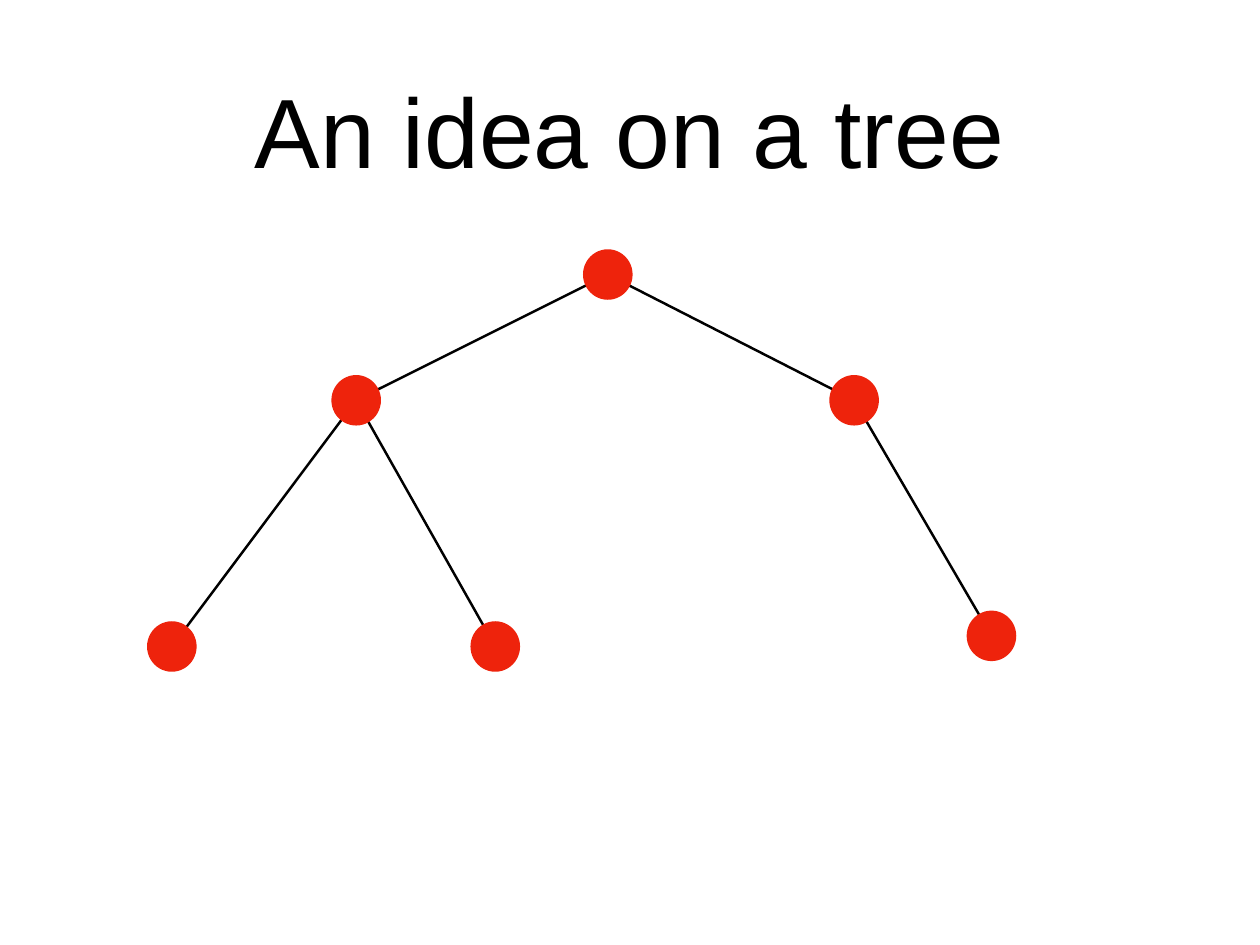
from lxml import etree
from pptx import Presentation
from pptx.dml.color import RGBColor
from pptx.enum.shapes import MSO_CONNECTOR, MSO_SHAPE
from pptx.enum.text import MSO_ANCHOR, PP_ALIGN
from pptx.oxml.ns import qn
from pptx.util import Inches, Pt

COLORS = {"background": "FFFFFF", "text": "000000", "edge": "000000", "node": "EE230C"}
FONT = "Arial"
NODE_W, NODE_H = 0.56, 0.57

# Node centres in inches
NODES = {
    "root": (6.86, 3.1),
    "left": (4.02, 4.52),
    "left_left": (1.94, 7.3),
    "left_right": (5.59, 7.3),
    "right": (9.64, 4.52),
    "right_right": (11.19, 7.18),
}
EDGES = [
    ("root", "right"),
    ("root", "left"),
    ("left", "left_left"),
    ("left", "left_right"),
    ("right", "right_right"),
]


def color(name):
    return RGBColor.from_string(COLORS[name])


def add_title(slide, text):
    box = slide.shapes.add_textbox(Inches(1.04), Inches(0.28), Inches(12.14), Inches(2.36))
    tf = box.text_frame
    tf.word_wrap = True
    tf.vertical_anchor = MSO_ANCHOR.MIDDLE
    tf.margin_left = tf.margin_right = tf.margin_top = tf.margin_bottom = Inches(0.06)
    p = tf.paragraphs[0]
    p.alignment = PP_ALIGN.CENTER
    r = p.add_run()
    r.text = text
    r.font.name = FONT
    r.font.size = Pt(80)
    r.font.color.rgb = color("text")


def add_edge(slide, parent, child):
    """Draw a line between the centres of two nodes."""
    ends = [Inches(v) for v in NODES[parent] + NODES[child]]
    line = slide.shapes.add_connector(MSO_CONNECTOR.STRAIGHT, *ends)
    line.line.color.rgb = color("edge")
    line.line.width = Pt(2)
    etree.SubElement(line._element.spPr, qn("a:effectLst"))


def add_node(slide, x, y):
    """Draw a filled circle centred on (x, y)."""
    sp = slide.shapes.add_shape(
        MSO_SHAPE.OVAL,
        Inches(x - NODE_W / 2), Inches(y - NODE_H / 2), Inches(NODE_W), Inches(NODE_H),
    )
    sp.shadow.inherit = False
    sp.fill.solid()
    sp.fill.fore_color.rgb = color("node")
    sp.line.fill.background()


def main():
    prs = Presentation()
    prs.slide_width, prs.slide_height = Inches(14.22), Inches(10.67)
    slide = prs.slides.add_slide(prs.slide_layouts[6])
    slide.background.fill.solid()
    slide.background.fill.fore_color.rgb = color("background")

    add_title(slide, "An idea on a tree")
    for parent, child in EDGES:
        add_edge(slide, parent, child)
    for x, y in NODES.values():
        add_node(slide, x, y)

    prs.save("out.pptx")


if __name__ == "__main__":
    main()
